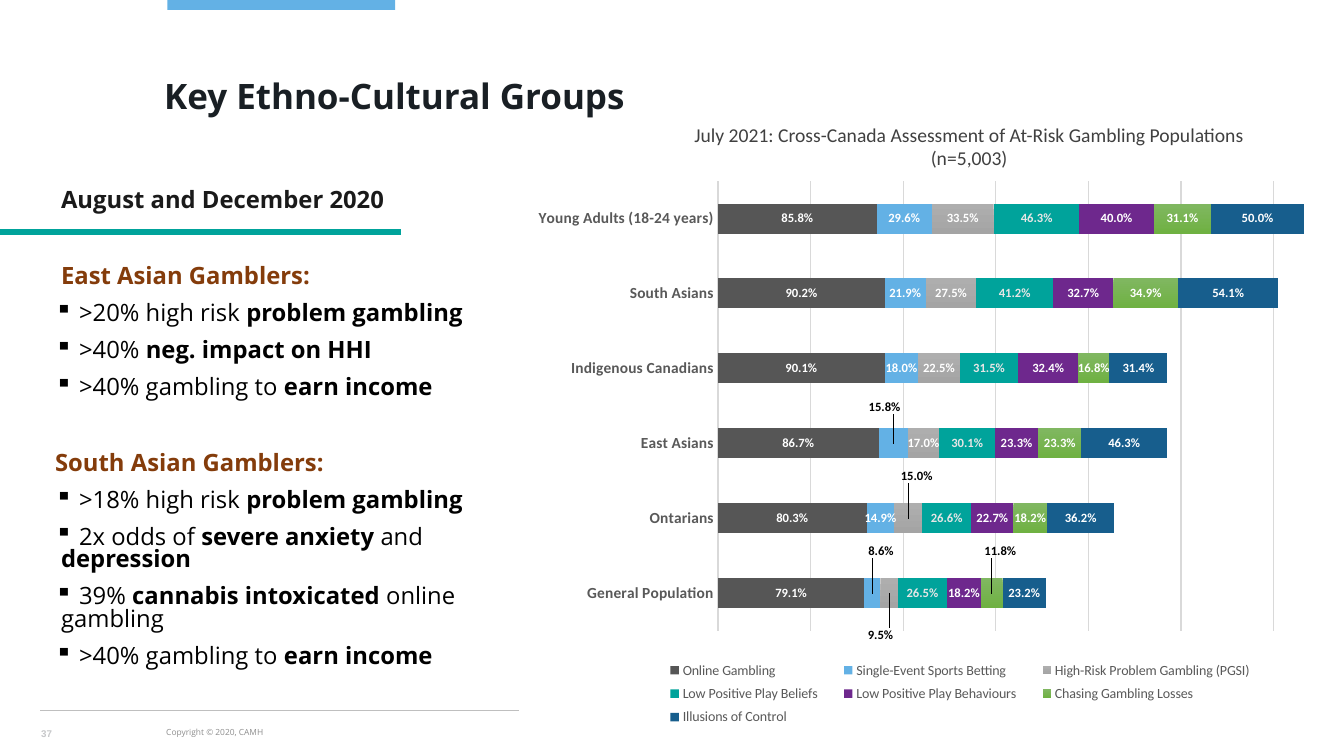
"""Builds the slide on key ethno-cultural groups with its stacked risk chart."""
from dataclasses import dataclass, field

from lxml import etree
from pptx import Presentation
from pptx.chart.data import CategoryChartData
from pptx.dml.color import RGBColor
from pptx.enum.chart import XL_CHART_TYPE, XL_LABEL_POSITION, XL_LEGEND_POSITION, XL_TICK_MARK
from pptx.enum.shapes import MSO_CONNECTOR, MSO_SHAPE
from pptx.enum.text import MSO_ANCHOR, PP_ALIGN
from pptx.oxml import parse_xml
from pptx.oxml.ns import nsdecls, qn
from pptx.util import Cm, Pt

STACKED = XL_CHART_TYPE.BAR_STACKED
LABEL_CENTER = XL_LABEL_POSITION.CENTER
LEGEND_BOTTOM = XL_LEGEND_POSITION.BOTTOM
NO_TICKS = XL_TICK_MARK.NONE
STRAIGHT = MSO_CONNECTOR.STRAIGHT
RECTANGLE = MSO_SHAPE.RECTANGLE
TOP, MIDDLE = MSO_ANCHOR.TOP, MSO_ANCHOR.MIDDLE
LEFT, CENTER = PP_ALIGN.LEFT, PP_ALIGN.CENTER
PERCENT = "0.0%"


@dataclass(frozen=True)
class Theme:
    heading_font: str = "Open Sans"
    chart_font: str = "Calibri"
    number_font: str = "Arial"
    title_size: float = 25
    body_size: float = 17
    caption_size: float = 14
    category_size: float = 11
    legend_size: float = 10
    label_size: float = 9
    number_size: float = 7
    footer_size: float = 6
    black: str = "000000"
    white: str = "FFFFFF"
    title: str = "191F24"
    dates: str = "1A1A1A"
    group: str = "843C0B"
    caption: str = "404040"
    axis_text: str = "595959"
    grid: str = "D9D9D9"
    rule: str = "BFBFBF"
    footer: str = "8E8E8E"
    number: str = "C7C8CA"
    blue: str = "63B1E5"
    teal: str = "00A39B"
    charcoal: str = "565656"
    purple: str = "6E288D"
    navy: str = "175E8D"
    pale: str = "E7E6E6"
    greys: tuple[str, str] = ("AEAEAE", "A4A4A4")
    greens: tuple[str, str] = ("80B761", "6FB142")


THEME = Theme()


@dataclass(frozen=True)
class Finding:
    """A line whose phrases alternate between plain and bold."""
    phrases: tuple[str, ...]
    color: str = THEME.black
    bullet: bool = True
    indent: float = 0.15
    before: float = 10


@dataclass(frozen=True)
class Measure:
    """One chart series; moved maps a category index to a label offset."""
    name: str
    shares: tuple[float, ...]
    colors: tuple[str, ...]
    label_color: str = THEME.white
    moved: dict[int, tuple[float, float]] = field(default_factory=dict)


FINDINGS = (
    Finding(("", "August and December 2020"), THEME.dates, False, before=0),
    Finding(("", "East Asian Gamblers:"), THEME.group, False, before=38),
    Finding((" >20% high risk ", "problem gambling")),
    Finding((" >40% ", "neg. impact on HHI")),
    Finding((" >40% gambling to ", "earn income")),
    Finding(("", "South Asian Gamblers:"), THEME.group, False, 0, 38),
    Finding((" >18% high risk ", "problem gambling")),
    Finding((" 2x odds of ", "severe anxiety ", "and ", "depression")),
    Finding((" 39% ", "cannabis intoxicated ", "online gambling")),
    Finding((" >40% gambling to ", "earn income")),
)
POPULATIONS = ("General Population", "Ontarians", "East Asians",
               "Indigenous Canadians", "South Asians", "Young Adults (18-24 years)")
MEASURES = (
    Measure("Online Gambling", (0.791, 0.803, 0.867, 0.901, 0.902, 0.858), (THEME.charcoal,)),
    Measure("Single-Event Sports Betting", (0.086, 0.149, 0.158, 0.18, 0.219, 0.296),
            (THEME.blue,), moved={0: (0.01, -0.07), 2: (-0.01, -0.06)}),
    Measure("High-Risk Problem Gambling (PGSI)", (0.095, 0.15, 0.17, 0.225, 0.275, 0.335),
            THEME.greys, moved={0: (-0.01, 0.07), 1: (0.01, -0.07)}),
    Measure("Low Positive Play Beliefs", (0.265, 0.266, 0.301, 0.315, 0.412, 0.463),
            (THEME.teal,), THEME.pale),
    Measure("Low Positive Play Behaviours", (0.182, 0.227, 0.233, 0.324, 0.327, 0.4),
            (THEME.purple,)),
    Measure("Chasing Gambling Losses", (0.118, 0.182, 0.233, 0.168, 0.349, 0.311),
            THEME.greens, moved={0: (0.01, -0.07)}),
    Measure("Illusions of Control", (0.232, 0.362, 0.463, 0.314, 0.541, 0.5), (THEME.navy,)),
)


def rgb(value: str) -> RGBColor:
    return RGBColor.from_string(value)


def style_font(font, size: float, color: str, bold: bool, name: str) -> None:
    font.size, font.bold, font.name = Pt(size), bold, name
    font.color.rgb = rgb(color)


def add_run(paragraph, text: str, *, size: float, color: str, bold: bool = False,
            font: str = THEME.heading_font) -> None:
    run = paragraph.add_run()
    run.text = text
    style_font(run.font, size, color, bold, font)


def add_frame(slide, box: tuple[float, ...], anchor=TOP):
    frame = slide.shapes.add_textbox(*map(Cm, box)).text_frame
    frame.word_wrap, frame.vertical_anchor = True, anchor
    return frame


def add_text(slide, text: str, box: tuple[float, ...], *, anchor=TOP, align=LEFT, **style) -> None:
    paragraph = add_frame(slide, box, anchor).paragraphs[0]
    paragraph.alignment = align
    add_run(paragraph, text, **style)


def add_rule(slide, start: float, end: float, y: float, color: str, width: float) -> None:
    rule = slide.shapes.add_connector(STRAIGHT, Cm(start), Cm(y), Cm(end), Cm(y))
    rule.line.color.rgb, rule.line.width = rgb(color), Pt(width)
    etree.SubElement(rule.element.spPr, qn("a:effectLst"))


def add_findings(slide) -> None:
    frame = add_frame(slide, (1.14, 4.67, 12.7, 13))
    for index, finding in enumerate(FINDINGS):
        paragraph = frame.add_paragraph() if index else frame.paragraphs[0]
        paragraph.line_spacing = 0.8
        if index:
            paragraph.space_before = Pt(finding.before)
        properties = paragraph._p.get_or_add_pPr()
        properties.set("marL", str(Cm(finding.indent)))
        if finding.bullet:
            properties.set("indent", str(-Cm(finding.indent)))
            etree.SubElement(properties, qn("a:buChar"), char="▪")
        for position, phrase in enumerate(finding.phrases):
            if phrase:
                add_run(paragraph, phrase, size=THEME.body_size, color=finding.color,
                        bold=position % 2 == 1)


def manual_layout(**values: float | str):
    entries = "".join(f'<c:{tag} val="{value}"/>' for tag, value in values.items())
    return parse_xml(f'<c:layout {nsdecls("c")}><c:manualLayout>{entries}</c:manualLayout></c:layout>')


def replace_layout(parent, index: int, **values: float | str) -> None:
    for old in parent.findall(qn("c:layout")):
        parent.remove(old)
    parent.insert(index, manual_layout(**values))


def style_measure(series, measure: Measure) -> None:
    fill = series.format.fill
    if len(measure.colors) == 1:
        fill.solid()
        fill.fore_color.rgb = rgb(measure.colors[0])
    else:
        fill.gradient()
        fill.gradient_angle = 270
        for stop, color in zip(fill.gradient_stops, measure.colors):
            stop.color.rgb = rgb(color)
    labels = series.data_labels
    labels.show_value, labels.position = True, LABEL_CENTER
    labels.number_format, labels.number_format_is_linked = PERCENT, False
    style_font(labels.font, THEME.label_size, measure.label_color, True, THEME.chart_font)
    for index, (x, y) in measure.moved.items():
        label = series.points[index].data_label
        style_font(label.font, THEME.label_size, THEME.black, True, THEME.chart_font)
        label.position = LABEL_CENTER
        moved = next(e for e in labels._element.findall(qn("c:dLbl")) if e.idx_val == index)
        moved.insert(1, manual_layout(x=x, y=y))
        moved.insert(2, parse_xml(f'<c:numFmt {nsdecls("c")} formatCode="{PERCENT}" sourceLinked="0"/>'))


def add_risk_chart(slide) -> None:
    data = CategoryChartData(number_format=PERCENT)
    data.categories = POPULATIONS
    for measure in MEASURES:
        data.add_series(measure.name, measure.shares)
    chart = slide.shapes.add_chart(STACKED, *map(Cm, (13.08, 4.11, 21.79, 15.11)), data).chart
    chart.has_title = False
    style_font(chart.font, THEME.legend_size, THEME.black, False, THEME.number_font)
    chart.element.chart.addnext(parse_xml(
        f'<c:spPr {nsdecls("c", "a")}><a:solidFill><a:srgbClr val="{THEME.white}"/></a:solidFill>'
        '<a:ln><a:noFill/></a:ln></c:spPr>'))
    plot = chart.plots[0]
    plot.gap_width, plot.overlap, plot.vary_by_categories = 150, 100, False
    for series, measure in zip(plot.series, MEASURES):
        style_measure(series, measure)
    populations, shares = chart.category_axis, chart.value_axis
    populations.major_tick_mark = NO_TICKS
    style_font(populations.tick_labels.font, THEME.category_size, THEME.axis_text, True, THEME.chart_font)
    shares.visible, shares.has_major_gridlines = False, True
    shares.minimum_scale, shares.maximum_scale, shares.major_unit = 0, 3.5, 0.5
    for line, width in ((populations.format.line, 1), (shares.major_gridlines.format.line, 0.75)):
        line.color.rgb, line.width = rgb(THEME.grid), Pt(width)
    chart.has_legend = True
    legend = chart.legend
    legend.position, legend.include_in_layout = LEGEND_BOTTOM, False
    style_font(legend.font, THEME.legend_size, THEME.axis_text, False, THEME.chart_font)
    replace_layout(legend._element, 1, xMode="edge", yMode="edge", x=0.15, y=0.82, w=0.72, h=0.13)
    replace_layout(chart.element.chart.plotArea, 0, layoutTarget="inner", xMode="edge",
                   yMode="edge", x=0.23, y=0.03, w=0.75, h=0.75)


def main() -> None:
    deck = Presentation()
    deck.slide_width, deck.slide_height = Cm(33.87), Cm(19.05)
    slide = deck.slides.add_slide(deck.slide_layouts[6])
    accent = slide.shapes.add_shape(RECTANGLE, *map(Cm, (4.22, 0, 5.74, 0.25)))
    accent.shadow.inherit = False
    accent.fill.solid()
    accent.fill.fore_color.rgb = rgb(THEME.blue)
    accent.line.fill.background()
    add_text(slide, "Copyright © 2020, CAMH", (3.94, 18.19, 15.14, 0.51),
             size=THEME.footer_size, color=THEME.footer)
    add_rule(slide, 1.02, 32.77, 17.91, THEME.rule, 0.75)
    add_text(slide, "37", (0.79, 18.16, 1.63, 0.66), anchor=MIDDLE, size=THEME.number_size,
             color=THEME.number, bold=True, font=THEME.number_font)
    add_text(slide, "Key Ethno-Cultural Groups", (3.89, 1.55, 28.73, 1.73), anchor=MIDDLE,
             size=THEME.title_size, color=THEME.title, bold=True)
    add_risk_chart(slide)
    add_findings(slide)
    add_rule(slide, -0.41, 10.11, 5.84, THEME.teal, 4.5)
    add_text(slide, "July 2021: Cross-Canada Assessment of At-Risk Gambling Populations (n=5,003)",
             (17.07, 2.97, 14.71, 1.42), align=CENTER, size=THEME.caption_size,
             color=THEME.caption, font=THEME.chart_font)
    deck.save("out.pptx")


if __name__ == "__main__":
    main()
